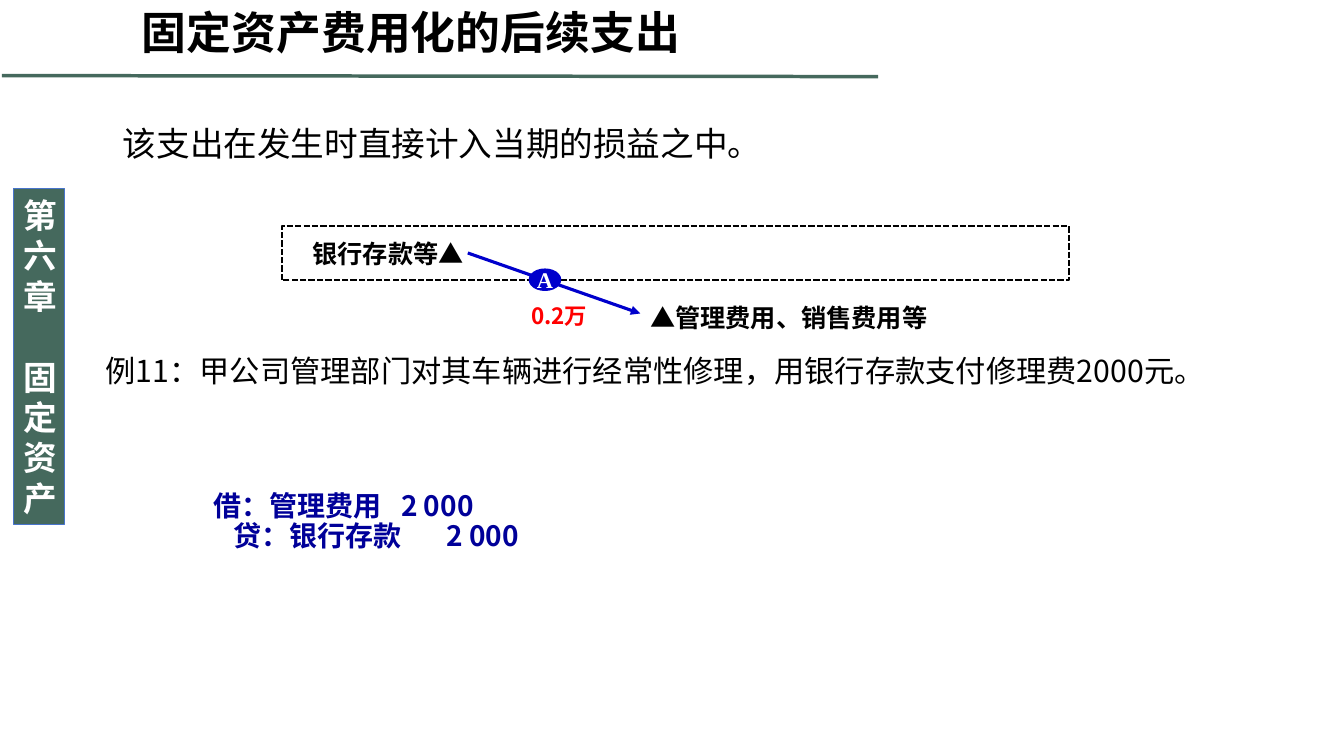
from dataclasses import dataclass

import pptx
import pptx.util
import pptx.dml.color
import pptx.enum.dml
import pptx.enum.shapes
import pptx.enum.text
import pptx.oxml
import pptx.oxml.ns

PX = 9144  # EMU in one px, 100 px to the inch
SANS = "Noto Sans CJK SC"
GREEN, BLUE, NAVY = "45695D", "0000CC", "000099"
BLACK, WHITE, RED = "000000", "FFFFFF", "FF0000"
KIND = pptx.enum.shapes.MSO_SHAPE
ALIGN = pptx.enum.text.PP_ALIGN
JUST = ALIGN.JUSTIFY


@dataclass
class Box:
    left: int
    top: int
    width: int
    height: int


@dataclass
class Line:
    """One paragraph; runs pair each text with its font."""
    runs: list[tuple[str, str]]
    before: float = 0
    indent: int = 0
    tab: int = 0


@dataclass
class Label:
    box: Box
    lines: list[Line]
    size: float
    color: str = BLACK
    bold: bool = True
    wrap: bool = True
    align: ALIGN | None = None
    space: float | None = None


@dataclass
class Panel:
    kind: KIND
    box: Box
    fill: str
    line: str
    width: float
    dash: pptx.enum.dml.MSO_LINE | None = None


def emu(px: int) -> int:
    return px * PX


def rgb(code: str) -> pptx.dml.color.RGBColor:
    return pptx.dml.color.RGBColor.from_string(code)


def place(box: Box) -> list[int]:
    return [emu(n) for n in (box.left, box.top, box.width, box.height)]


def add_xml(parent, tag: str, **attrs: str):
    child = pptx.oxml.parse_xml(f"<a:{tag} {pptx.oxml.ns.nsdecls('a')}/>")
    for key, value in attrs.items():
        child.set(key, value)
    parent.append(child)
    return child


def write(frame, lines: list[Line], *, size: float, color: str = BLACK,
          bold: bool = True, wrap: bool = True, align: ALIGN | None = None,
          space: float | None = None) -> None:
    frame.word_wrap = wrap
    for i, line in enumerate(lines):
        para = frame.add_paragraph() if i else frame.paragraphs[0]
        para.alignment = align or ALIGN.LEFT
        if space:
            para.line_spacing = space
        if line.before:
            para.space_before = pptx.util.Pt(line.before)
        props = para._p.get_or_add_pPr()
        if line.indent:
            props.set("marL", str(emu(line.indent)))
        if line.tab:
            tabs = add_xml(props, "tabLst")
            add_xml(tabs, "tab", pos=str(emu(line.tab)), algn="l")
        for text, face in line.runs:
            run = para.add_run()
            run.text = text
            font = run.font
            font.size = pptx.util.Pt(size)
            font.bold = bold
            font.name = face
            font.color.rgb = rgb(color)
            add_xml(run._r.get_or_add_rPr(), "ea", typeface=SANS)


def add_label(slide, label: Label) -> None:
    frame = slide.shapes.add_textbox(*place(label.box)).text_frame
    write(frame, label.lines, size=label.size, color=label.color,
          bold=label.bold, wrap=label.wrap, align=label.align,
          space=label.space)


def add_panel(slide, panel: Panel):
    shape = slide.shapes.add_shape(panel.kind, *place(panel.box))
    shape.shadow.inherit = False
    shape.fill.solid()
    shape.fill.fore_color.rgb = rgb(panel.fill)
    shape.line.color.rgb = rgb(panel.line)
    shape.line.width = pptx.util.Pt(panel.width)
    if panel.dash:
        shape.line.dash_style = panel.dash
    return shape


def add_line(slide, start: tuple[int, int], end: tuple[int, int],
             color: str, width: float, arrow: bool = False) -> None:
    line = slide.shapes.add_connector(
        pptx.enum.shapes.MSO_CONNECTOR.STRAIGHT,
        *[emu(n) for n in start + end])
    line.line.color.rgb = rgb(color)
    line.line.width = pptx.util.Pt(width)
    if arrow:
        add_xml(line.line._get_or_add_ln(), "tailEnd", type="triangle")
    add_xml(line._element.spPr, "effectLst")


CHAPTER = Panel(KIND.RECTANGLE, Box(13, 187, 51, 333), GREEN, "4874CB", 0.75)
ASSETS = Panel(KIND.PARALLELOGRAM, Box(280, 224, 780, 54), WHITE, BLACK, 1.5,
               pptx.enum.dml.MSO_LINE.SQUARE_DOT)
MARK = Panel(KIND.FLOWCHART_CONNECTOR, Box(525, 267, 31, 21), BLUE, BLUE, 1)

LABELS = [
    Label(Box(95, 349, 1150, 106), [Line([(
        "例11：甲公司管理部门对其车辆进行经常性修理，用银行存款支付修理费2000元。",
        SANS)])], 21.6, bold=False, align=JUST, space=0.9),
    Label(Box(300, 232, 188, 40),
          [Line([("银行存款等", "Arial"), ("▲", SANS)])], 18),
    Label(Box(635, 295, 307, 40),
          [Line([("▲", SANS), ("管理费用、销售费用等", "Arial")])], 18),
    Label(Box(517, 295, 94, 37), [Line([("0.2万", SANS)])], 16, RED),
    Label(Box(202, 483, 354, 71), [
        Line([("借：管理费用\t2 000", SANS)], tab=186),
        Line([("贷：银行存款\t2 000", SANS)], indent=20, tab=211),
    ], 20, NAVY, align=JUST, space=0.9),
    Label(Box(131, 0, 714, 64),
          [Line([("固定资产费用化的后续支出", SANS)])], 32),
    Label(Box(112, 117, 660, 50),
          [Line([("该支出在发生时直接计入当期的损益之中。", SANS)])],
          24, bold=False, wrap=False),
]


def main() -> None:
    deck = pptx.Presentation()
    deck.slide_width, deck.slide_height = emu(1333), emu(750)
    slide = deck.slides.add_slide(deck.slide_layouts[6])

    add_line(slide, (2, 75), (871, 76), GREEN, 2.5)
    chapter = add_panel(slide, CHAPTER).text_frame
    write(chapter, [Line([("第六章", SANS)]),
                    Line([("固定资产", SANS)], before=29)],
          size=24, color=WHITE)
    add_panel(slide, ASSETS).adjustments[0] = 0
    add_line(slide, (464, 251), (635, 311), BLUE, 2.25, arrow=True)

    mark = add_panel(slide, MARK).text_frame
    mark.margin_left = mark.margin_right = 0
    mark.margin_top = mark.margin_bottom = 0
    write(mark, [Line([("A", "Times New Roman")])], size=16, color=WHITE,
          align=ALIGN.CENTER)
    for label in LABELS:
        add_label(slide, label)
    deck.save("out.pptx")


if __name__ == "__main__":
    main()
